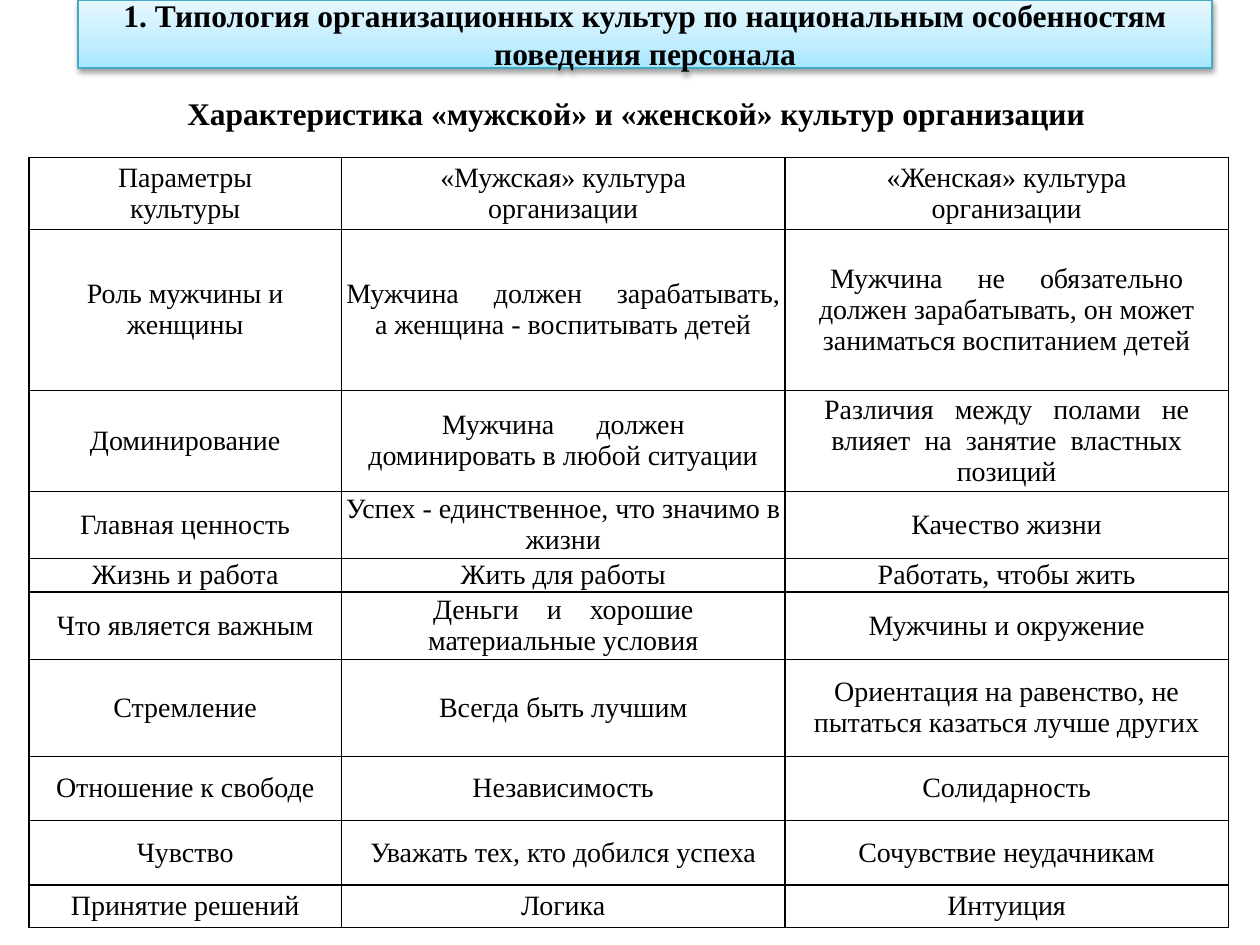
from pptx import Presentation
from pptx.dml.color import RGBColor
from pptx.enum.shapes import MSO_SHAPE as Shape
from pptx.enum.text import MSO_ANCHOR as Anchor, MSO_AUTO_SIZE as AutoSize, PP_ALIGN as Align
from pptx.oxml import parse_xml
from pptx.oxml.ns import nsdecls
from pptx.util import Inches, Pt

COLORS = {"text": "000000", "paper": "FFFFFF", "border": "000000", "banner_line": "46AAC5",
          "banner_low": "A7E6FF", "banner_mid": "C1EDFF", "banner_high": "E7F8FF"}
COLUMN_WIDTHS = [2.48, 3.52, 3.52]
ROW_HEIGHTS = [0.57, 1.28, 0.77, 0.51, 0.26, 0.51, 0.77, 0.51, 0.51, 0.34]

# A cell is a string, or a list of (phrase, word gap in space widths)
CULTURES = [
    ["Параметры\nкультуры", "«Мужская» культура\nорганизации", "«Женская» культура\nорганизации"],
    ["Роль мужчины и женщины",
     [("Мужчина должен зарабатывать,", 5), (" а женщина - воспитывать детей", 1)],
     [("Мужчина не обязательно", 5),
      (" должен зарабатывать, он может заниматься воспитанием детей", 1)]],
    ["Доминирование",
     [("Мужчина должен ", 6), ("доминировать в любой ситуации", 1)],
     [("Различия между полами не", 3), (" ", 1), ("влияет на занятие властных", 2),
      (" позиций", 1)]],
    ["Главная ценность", "Успех - единственное, что значимо в жизни", "Качество жизни"],
    ["Жизнь и работа", "Жить для работы", "Работать, чтобы жить"],
    ["Что является важным",
     [("Деньги и хорошие ", 4), ("материальные условия", 1)], "Мужчины и окружение"],
    ["Стремление", "Всегда быть лучшим",
     "Ориентация на равенство, не пытаться казаться лучше других"],
    ["Отношение к свободе", "Независимость", "Солидарность"],
    ["Чувство", "Уважать тех, кто добился успеха", "Сочувствие неудачникам"],
    ["Принятие решений", "Логика", "Интуиция"],
]


class SlideBuilder:
    font = "Times New Roman"
    heading_size = 18
    cell_size = 16

    def __init__(self, slide):
        self.slide = slide

    def color(self, name):
        return RGBColor.from_string(COLORS[name])

    def run(self, paragraph, text, size, bold=False):
        run = paragraph.add_run()
        run.text = text
        run.font.name = self.font
        run.font.size = Pt(size)
        run.font.bold = bold
        run.font.color.rgb = self.color("text")
        return run

    def heading_text(self, frame, text):
        frame.word_wrap = True
        frame.vertical_anchor = Anchor.MIDDLE
        frame.paragraphs[0].alignment = Align.CENTER
        self.run(frame.paragraphs[0], text, self.heading_size, bold=True)

    def banner(self, text, left, top, width, height):
        banner = self.slide.shapes.add_shape(
            Shape.RECTANGLE, Inches(left), Inches(top), Inches(width), Inches(height))
        banner.line.color.rgb = self.color("banner_line")
        banner.line.width = Pt(0.75)
        # Three-stop gradient, running upwards
        stops = "".join(
            f'<a:gs pos="{pos}"><a:srgbClr val="{COLORS[name]}"/></a:gs>'
            for pos, name in [(0, "banner_low"), (35000, "banner_mid"), (100000, "banner_high")])
        properties = banner.element.spPr
        properties.insert(2, parse_xml(
            f'<a:gradFill {nsdecls("a")} rotWithShape="1"><a:gsLst>{stops}</a:gsLst>'
            '<a:lin ang="16200000" scaled="1"/></a:gradFill>'))
        # Soft shadow below
        properties.append(parse_xml(
            f'<a:effectLst {nsdecls("a")}><a:outerShdw blurRad="{Pt(3.1)}" dist="{Pt(1.6)}" '
            'dir="5400000" rotWithShape="0"><a:srgbClr val="000000"><a:alpha val="38000"/>'
            '</a:srgbClr></a:outerShdw></a:effectLst>'))
        self.heading_text(banner.text_frame, text)

    def caption(self, text, left, top, width, height):
        caption = self.slide.shapes.add_textbox(
            Inches(left), Inches(top), Inches(width), Inches(height))
        self.heading_text(caption.text_frame, text)
        caption.text_frame.auto_size = AutoSize.SHAPE_TO_FIT_TEXT

    def phrase(self, paragraph, text, gap):
        if gap == 1:
            self.run(paragraph, text, self.cell_size)
            return
        # Widen each space by letter spacing; a space is a quarter of the font size
        spacing = (gap - 1) * self.cell_size * 25
        for index, word in enumerate(text.split(" ")):
            if index:
                space = self.run(paragraph, " ", self.cell_size)
                space.font._element.set("spc", str(spacing))
            if word:
                self.run(paragraph, word, self.cell_size)

    def cell(self, cell, content):
        cell.fill.solid()
        cell.fill.fore_color.rgb = self.color("paper")
        cell.vertical_anchor = Anchor.MIDDLE
        cell.margin_left = cell.margin_right = Inches(0.02)
        cell.margin_top = cell.margin_bottom = 0
        lines = [[(line, 1)] for line in content.split("\n")] if isinstance(content, str) else [content]
        for index, line in enumerate(lines):
            frame = cell.text_frame
            paragraph = frame.add_paragraph() if index else frame.paragraphs[0]
            paragraph.alignment = Align.CENTER
            for text, gap in line:
                self.phrase(paragraph, text, gap)
        # Borders come before the fill in the cell properties
        properties = cell._tc.get_or_add_tcPr()
        for index, side in enumerate(("lnL", "lnR", "lnT", "lnB")):
            properties.insert(index, parse_xml(
                f'<a:{side} {nsdecls("a")} w="{Pt(1)}"><a:solidFill>'
                f'<a:srgbClr val="{COLORS["border"]}"/></a:solidFill></a:{side}>'))

    def table(self, rows, left, top, widths, heights):
        table = self.slide.shapes.add_table(
            len(rows), len(widths), Inches(left), Inches(top),
            Inches(sum(widths)), Inches(sum(heights))).table
        table.first_row = table.horz_banding = False
        for column, width in zip(table.columns, widths):
            column.width = Inches(width)
        for row, height, contents in zip(table.rows, heights, rows):
            row.height = Inches(height)
            for cell, content in zip(row.cells, contents):
                self.cell(cell, content)


def main():
    deck = Presentation()
    deck.slide_width, deck.slide_height = Inches(10), Inches(7.5)
    builder = SlideBuilder(deck.slides.add_slide(deck.slide_layouts[6]))

    # Headings
    builder.banner("1. Типология организационных культур по национальным особенностям "
                   "поведения персонала", 0.62, 0, 9, 0.54)
    builder.caption("Характеристика «мужской» и «женской» культур организации",
                    0.78, 0.7, 8.54, 0.4)
    # Comparison of the two cultures
    builder.table(CULTURES, 0.23, 1.25, COLUMN_WIDTHS, ROW_HEIGHTS)

    deck.save("out.pptx")


if __name__ == "__main__":
    main()
